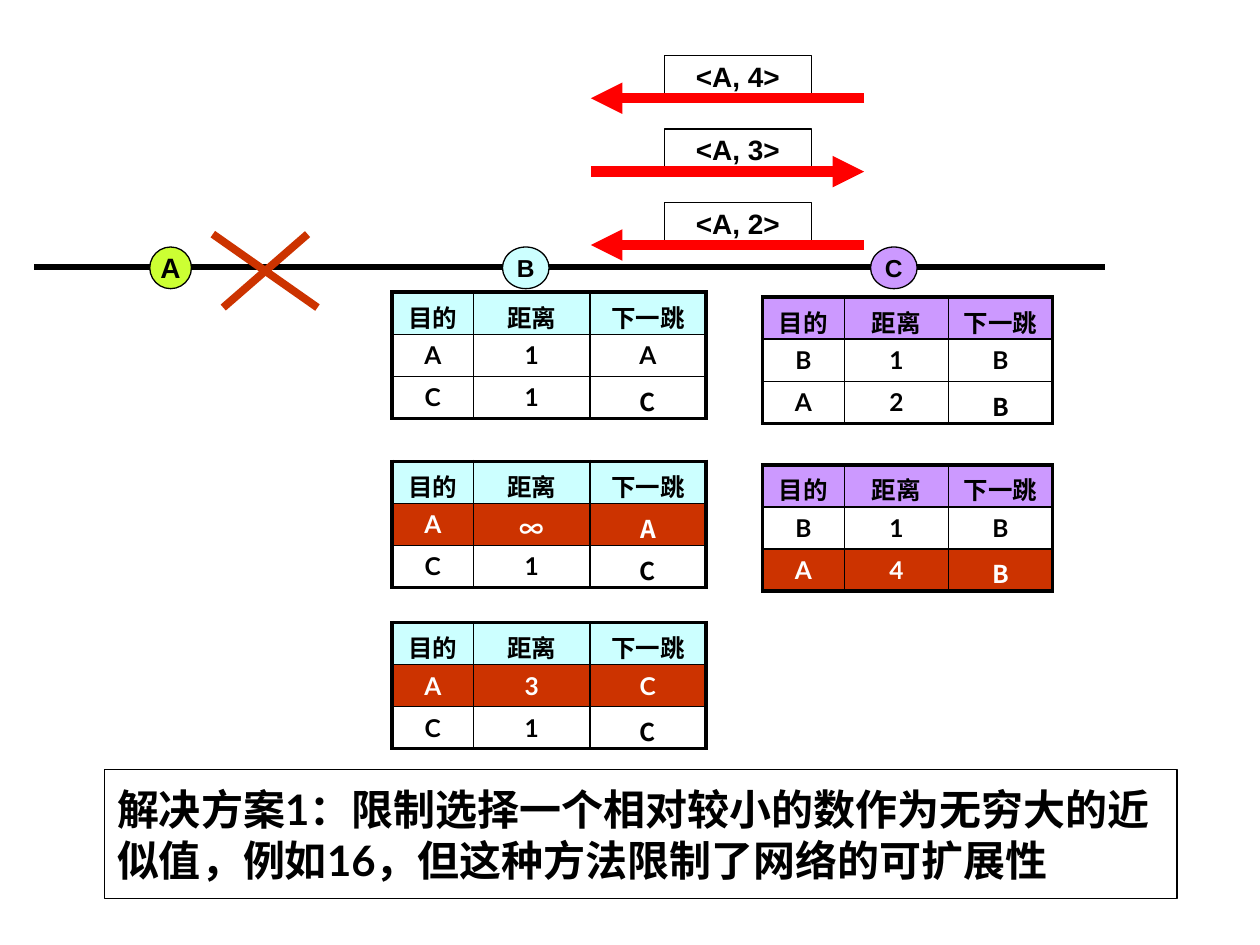
import pptx
import pptx.dml.color
import pptx.enum.shapes
import pptx.enum.text
import pptx.oxml.ns
import pptx.util
from lxml import etree

Cm = pptx.util.Cm
Pt = pptx.util.Pt
rgb = pptx.dml.color.RGBColor.from_string
qn = pptx.oxml.ns.qn
kind = pptx.enum.shapes.MSO_SHAPE
align = pptx.enum.text.PP_ALIGN
middle = pptx.enum.text.MSO_ANCHOR.MIDDLE

CJK = "Noto Sans CJK SC"
RED = "CC3300"
CYAN = "CCFFFF"
PLUM = "CC99FF"


def write(frame, text, size, font, color="000000", side=align.CENTER):
    """Add one bold run to the first paragraph and return the paragraph."""
    para = frame.paragraphs[0]
    para.alignment = side
    run = para.add_run()
    run.text = text
    run.font.size = Pt(size)
    run.font.bold = True
    run.font.name = font
    run.font.color.rgb = rgb(color)
    east = etree.SubElement(run.font._element, qn("a:ea"))
    east.set("typeface", CJK)
    return para


def draw(start, end, color, width, arrow=False):
    """Add a straight line between two points, with an optional arrowhead."""
    line = slide.shapes.add_connector(
        pptx.enum.shapes.MSO_CONNECTOR.STRAIGHT,
        Cm(start[0]), Cm(start[1]), Cm(end[0]), Cm(end[1]))
    line.line.color.rgb = rgb(color)
    line.line.width = Pt(width)
    if arrow:
        tip = etree.SubElement(line.line._get_or_add_ln(), qn("a:tailEnd"))
        tip.set("type", "triangle")
    etree.SubElement(line._element.spPr, qn("a:effectLst"))


deck = pptx.Presentation()
deck.slide_width = Cm(25.4)
deck.slide_height = Cm(19.05)
slide = deck.slides.add_slide(deck.slide_layouts[6])

# Network link, with its nodes, message labels and conclusion
draw((0.69, 5.38), (22.28, 5.38), "000000", 3)

top, step = 1.12, 1.48
shapes = [
    (kind.OVAL, 3.02, 4.98, 0.84, "CCFF33", "A", 16),
    (kind.OVAL, 10.13, 4.98, 0.94, CYAN, "B", 14),
    (kind.OVAL, 17.55, 4.98, 0.94, PLUM, "C", 14),
]
for i, cost in enumerate((4, 3, 2)):
    shapes.append((kind.RECTANGLE, 13.39, top + i * step, 2.97, None, f"<A, {cost}>", 16))

for form, x, y, width, fill, text, size in shapes:
    shape = slide.shapes.add_shape(form, Cm(x), Cm(y), Cm(width), Cm(0.84))
    shape.shadow.inherit = False
    if fill:
        shape.fill.solid()
        shape.fill.fore_color.rgb = rgb(fill)
    else:
        shape.fill.background()
    shape.line.color.rgb = rgb("000000")
    shape.line.width = Pt(0.75)
    shape.text_frame.word_wrap = False
    shape.text_frame.vertical_anchor = middle
    write(shape.text_frame, text, size, "Arial")

note = slide.shapes.add_textbox(Cm(2.11), Cm(15.52), Cm(21.62), Cm(2.59))
note.fill.solid()
note.fill.fore_color.rgb = rgb("FFFFFF")
note.line.color.rgb = rgb("000000")
note.line.width = Pt(0.75)
note.text_frame.word_wrap = True
note.text_frame.vertical_anchor = middle
write(note.text_frame,
      "解决方案1：限制选择一个相对较小的数作为无穷大的近似值，例如16，但这种方法限制了网络的可扩展性",
      24, "Lato", side=align.LEFT)

# Routing tables: left, top, width of the last columns, header fill,
# body rows, changed row, cells in the CJK font
tables = [
    (7.9, 5.89, 2.34, CYAN, ("A1A", "C1C"), None, [(2, 2)]),
    (15.37, 5.99, 2.1, PLUM, ("B1B", "A2B"), None, [(2, 2)]),
    (7.9, 9.3, 2.34, CYAN, ("A∞A", "C1C"), 1, [(1, 1), (1, 2), (2, 2)]),
    (7.9, 12.55, 2.34, CYAN, ("A3C", "C1C"), 1, [(2, 2)]),
    (15.37, 9.37, 2.1, PLUM, ("B1B", "A4B"), 2, [(2, 2)]),
]
for x, y, wide, head, body, hot, east in tables:
    grid = slide.shapes.add_table(3, 3, Cm(x), Cm(y), Cm(1.65 + 2 * wide), Cm(2.34)).table
    grid.first_row = False
    grid.horz_banding = False
    for col, width in zip(grid.columns, (1.65, wide, wide)):
        col.width = Cm(width)
    for r, words in enumerate([("目的", "距离", "下一跳"), *body]):
        for c, word in enumerate(words):
            cell = grid.cell(r, c)
            color = "FFFFFF" if r == hot else "000000"
            para = write(cell.text_frame, word, 14, CJK if (r, c) in east else "Lato", color)
            gap = etree.SubElement(para._p.get_or_add_pPr(), qn("a:spcBef"))
            etree.SubElement(gap, qn("a:spcPct")).set("val", "20000")

            props = cell._tc.get_or_add_tcPr()
            outer = {"L": c == 0, "R": c == 2, "T": r == 0, "B": r == 2}
            for edge, thick in outer.items():
                rule = etree.SubElement(props, qn(f"a:ln{edge}"))
                rule.set("w", str(Pt(2.25 if thick else 1)))
                paint = etree.SubElement(rule, qn("a:solidFill"))
                etree.SubElement(paint, qn("a:srgbClr")).set("val", "000000")

            fill = head if r == 0 else RED if r == hot else None
            if fill:
                cell.fill.solid()
                cell.fill.fore_color.rgb = rgb(fill)
            else:
                cell.fill.background()

# Cross over the broken link
draw((6.2, 4.72), (4.5, 6.2), RED, 4.5)
draw((4.29, 4.72), (6.4, 6.2), RED, 4.5)

# Messages between B and C
for i, ends in enumerate([(17.42, 11.91), (11.91, 17.42), (17.42, 11.91)]):
    y = top + 0.86 + i * step
    draw((ends[0], y), (ends[1], y), "FF0000", 6, arrow=True)

deck.save("out.pptx")
